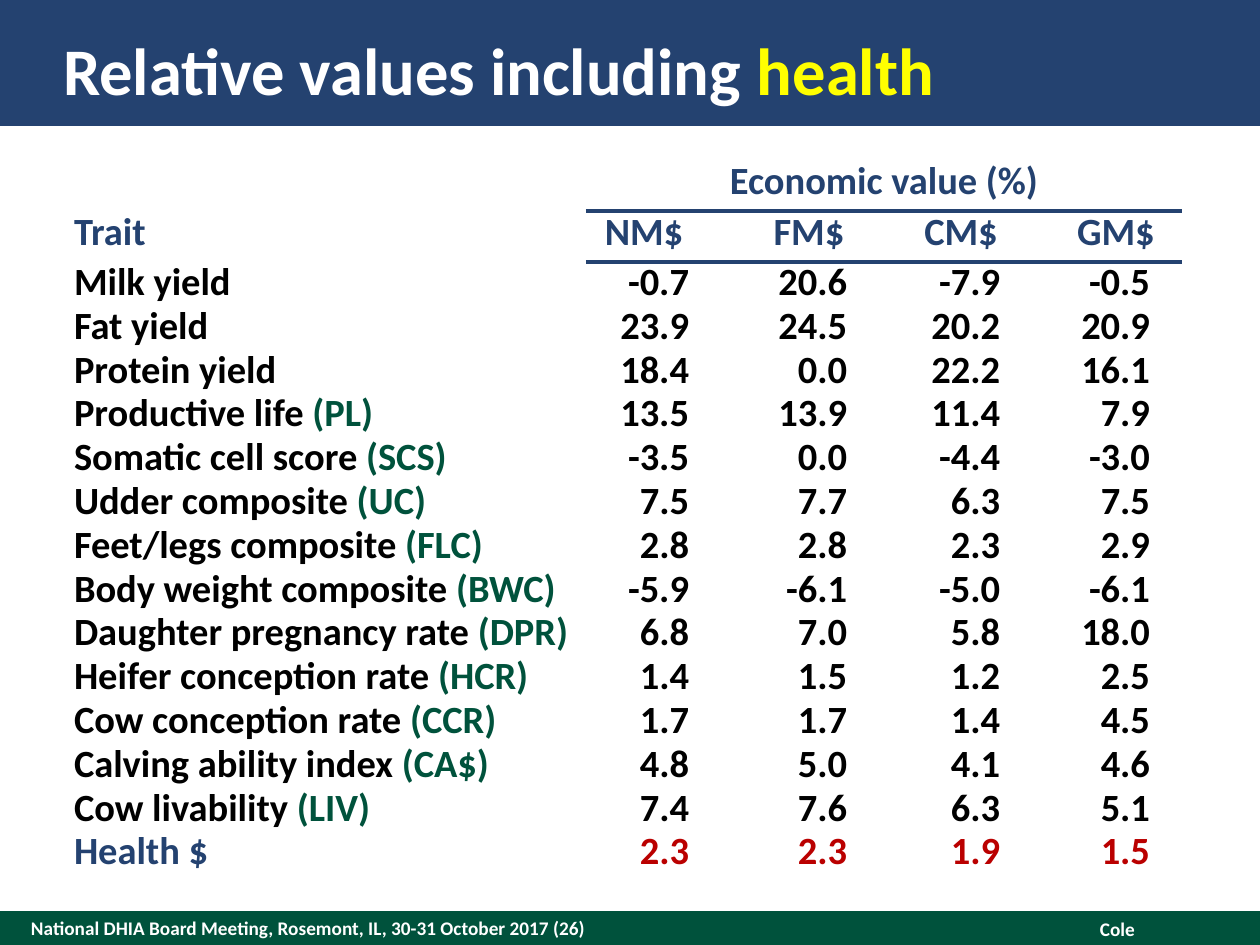
import pptx
import pptx.util
import pptx.dml.color
import pptx.enum.shapes
import pptx.enum.text
import pptx.oxml

SCALE = 914400 / 126
HUES = {"navy": "244270", "green": "00523C", "white": "FFFFFF",
        "yellow": "FFFF00", "black": "000000", "red": "BA0000"}
ALIGN = pptx.enum.text.PP_ALIGN
ANCHOR = pptx.enum.text.MSO_ANCHOR
SIDES = ("margin_left", "margin_top", "margin_right", "margin_bottom")
PLAIN = "{2D5ABB26-0587-4C30-8999-92F81FD0307C}"
BORDER = ('<a:{tag} xmlns:a="http://schemas.openxmlformats.org/drawingml/2006/main"'
          ' w="28575"><a:solidFill><a:srgbClr val="{hue}"/></a:solidFill></a:{tag}>')
COLS = (512, 116, 189, 159, 132)
HEADS = ("NM$", "FM$", "CM$", "GM$")
HEADPADS = ((0, 6, 0, 6), (25, 6, 0, 6), (0, 6, 19, 6), (0, 6, 0, 6))
PADS = ((0, 0, 13, 0), (13, 0, 44, 0), (0, 0, 50, 0), (0, 0, 32, 0))
TRAITS = (
    ("Milk yield", "", "-0.7", "20.6", "-7.9", "-0.5"),
    ("Fat yield", "", "23.9", "24.5", "20.2", "20.9"),
    ("Protein yield", "", "18.4", "0.0", "22.2", "16.1"),
    ("Productive life", " (PL)", "13.5", "13.9", "11.4", "7.9"),
    ("Somatic cell score", " (SCS)", "-3.5", "0.0", "-4.4", "-3.0"),
    ("Udder composite", " (UC)", "7.5", "7.7", "6.3", "7.5"),
    ("Feet/legs composite", " (FLC)", "2.8", "2.8", "2.3", "2.9"),
    ("Body weight composite", " (BWC)", "-5.9", "-6.1", "-5.0", "-6.1"),
    ("Daughter pregnancy rate", " (DPR)", "6.8", "7.0", "5.8", "18.0"),
    ("Heifer conception rate", " (HCR)", "1.4", "1.5", "1.2", "2.5"),
    ("Cow conception rate", " (CCR)", "1.7", "1.7", "1.4", "4.5"),
    ("Calving ability index", " (CA$)", "4.8", "5.0", "4.1", "4.6"),
    ("Cow livability", " (LIV)", "7.4", "7.6", "6.3", "5.1"),
    ("Health $", "", "2.3", "2.3", "1.9", "1.5"),
)


def px(num):
    return pptx.util.Emu(round(num * SCALE))


def rgb(hue):
    return pptx.dml.color.RGBColor.from_string(HUES[hue])


def apply(item, values):
    for name, value in values.items():
        setattr(item, name, value)


def pads(item, sizes):
    apply(item, {side: px(size) for side, size in zip(SIDES, sizes)})


def write(frame, runs, size, align=ALIGN.LEFT, lead=None):
    para = frame.paragraphs[0]
    para.alignment = align
    if lead:
        para.line_spacing = pptx.util.Pt(lead)
    for text, hue in runs:
        run = para.add_run()
        run.text = text
        apply(run.font, {"name": "Calibri", "size": pptx.util.Pt(size), "bold": True})
        run.font.color.rgb = rgb(hue)


def bar(slide, top, height, hue):
    shape = slide.shapes.add_shape(
        pptx.enum.shapes.MSO_SHAPE.RECTANGLE, 0, px(top), px(1260), px(height))
    shape.shadow.inherit = False
    shape.fill.solid()
    shape.fill.fore_color.rgb = rgb(hue)
    shape.line.fill.background()


def label(slide, box, text, align, anchor, sizes):
    frame = slide.shapes.add_textbox(*map(px, box)).text_frame
    apply(frame, {"word_wrap": True, "vertical_anchor": anchor})
    pads(frame, sizes)
    write(frame, [(text, "white")], 11, align)


def head(slide):
    title = slide.shapes.title
    apply(title, {"left": px(63), "top": px(25), "width": px(1167), "height": px(88)})
    frame = title.text_frame
    apply(frame, {"vertical_anchor": ANCHOR.MIDDLE, "word_wrap": True,
                  "auto_size": pptx.enum.text.MSO_AUTO_SIZE.NONE})
    pads(frame, (0, 0, 0, 0))
    write(frame, [("Relative values including ", "white"), ("health", "yellow")], 38)
    slide.shapes._spTree.append(title._element)


def fill(cell, runs, align, lead, sizes, anchor=ANCHOR.TOP):
    cell.vertical_anchor = anchor
    pads(cell, sizes)
    write(cell.text_frame, runs, 22, align, lead)


def rule(cell, tag):
    line = pptx.oxml.parse_xml(BORDER.format(tag=tag, hue=HUES["navy"]))
    cell._tc.get_or_add_tcPr().insert(0, line)


def grid(slide):
    item = slide.shapes.add_table(
        len(TRAITS) + 2, len(COLS), px(74), px(163), px(sum(COLS)), px(712))
    table = item.table
    apply(table, {"first_row": False, "horz_banding": False})
    table._tbl.tblPr[0].text = PLAIN
    for col, width in zip(table.columns, COLS):
        col.width = px(width)
    for row, height in zip(table.rows, [48, 51] + [43] * len(TRAITS)):
        row.height = px(height)
    item.height = px(712)
    for cell in table.iter_cells():
        cell.fill.background()

    table.cell(0, 0).merge(table.cell(1, 0))
    table.cell(0, 1).merge(table.cell(0, 4))
    fill(table.cell(0, 0), [("Trait", "navy")], ALIGN.LEFT, 24, (0, 0, 0, 6), ANCHOR.BOTTOM)
    fill(table.cell(0, 1), [("Economic value (%)", "navy")], ALIGN.CENTER, 24,
         (0, 0, 0, 6), ANCHOR.BOTTOM)
    for col, (text, sizes) in enumerate(zip(HEADS, HEADPADS), 1):
        fill(table.cell(1, col), [(text, "navy")], ALIGN.CENTER, 22, sizes, ANCHOR.BOTTOM)
        rule(table.cell(0, col), "lnB")
        rule(table.cell(1, col), "lnT")

    for row, (name, short, *values) in enumerate(TRAITS, 2):
        last = row == len(TRAITS) + 1
        runs = [(name, "navy" if last else "black")]
        if short:
            runs.append((short, "green"))
        fill(table.cell(row, 0), runs, ALIGN.LEFT, 25, (0, 0, 0, 0))
        for col, (value, sizes) in enumerate(zip(values, PADS), 1):
            fill(table.cell(row, col), [(value, "red" if last else "black")],
                 ALIGN.RIGHT, 25, sizes)


def main():
    deck = pptx.Presentation()
    apply(deck, {"slide_width": px(1260), "slide_height": px(945)})
    slide = deck.slides.add_slide(deck.slide_layouts[5])
    bar(slide, 911, 34, "green")
    bar(slide, 0, 126, "navy")
    label(slide, (31, 911, 882, 34),
          "National DHIA Board Meeting, Rosemont, IL, 30-31 October 2017 (26)",
          ALIGN.LEFT, ANCHOR.MIDDLE, (0, 0, 0, 0))
    label(slide, (896, 911, 252, 37), "Cole", ALIGN.RIGHT, ANCHOR.TOP, (13, 6, 13, 6))
    head(slide)
    grid(slide)
    deck.save("out.pptx")


if __name__ == "__main__":
    main()
